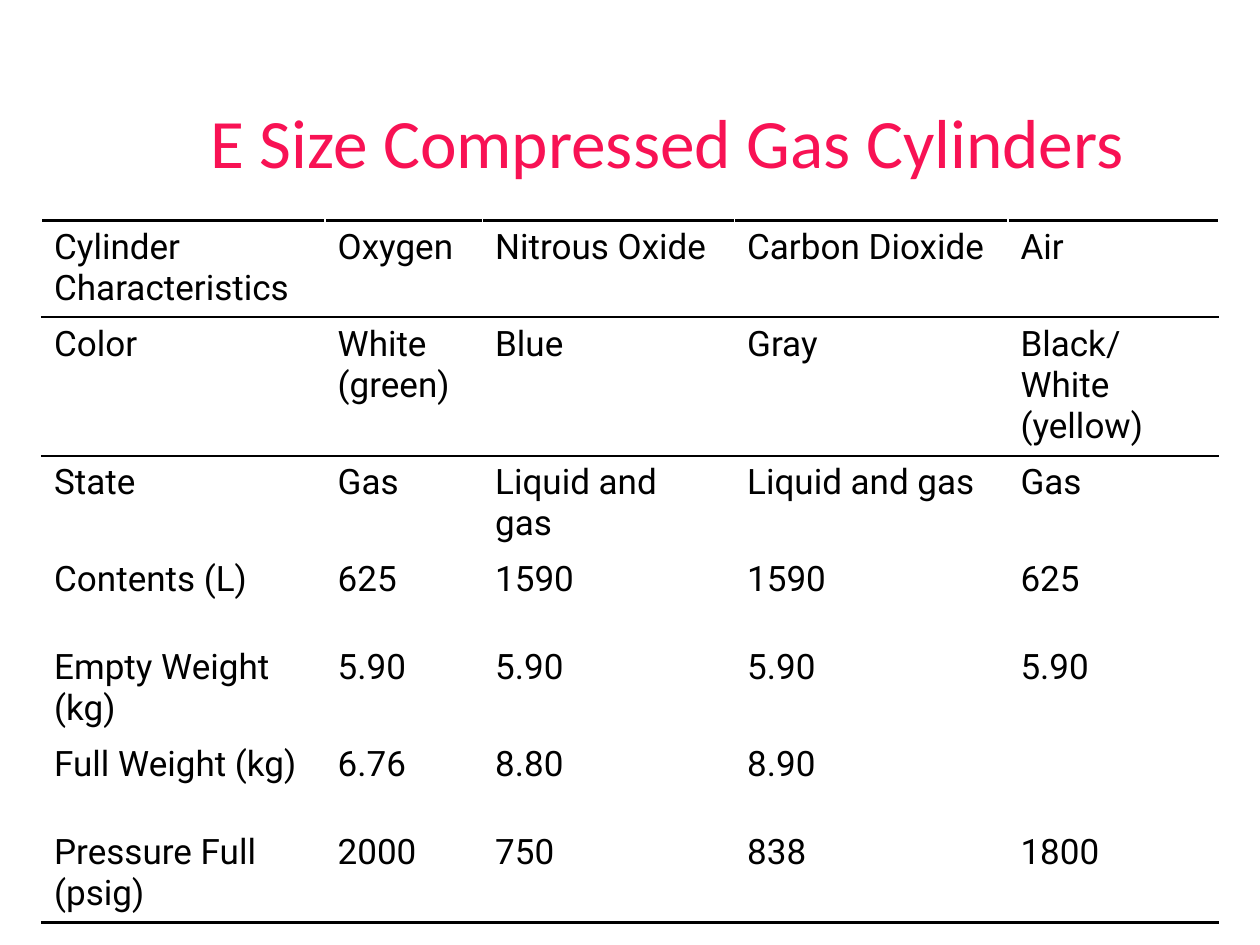
"""Build a slide with a table of E size compressed gas cylinders."""
from lxml import etree
from pptx import Presentation
from pptx.dml.color import RGBColor
from pptx.enum.text import MSO_ANCHOR, PP_ALIGN
from pptx.oxml.ns import qn
from pptx.util import Inches, Pt

MIDDLE = MSO_ANCHOR.MIDDLE
CENTER = PP_ALIGN.CENTER
PINK, BLACK = "F81254", "000000"
TITLE = "E Size Compressed Gas Cylinders"
ROWS = [
    ("Cylinder Characteristics", "Oxygen", "Nitrous Oxide", "Carbon Dioxide", "Air"),
    ("Color", "White (green)", "Blue", "Gray", "Black/White (yellow)"),
    ("State", "Gas", "Liquid and gas", "Liquid and gas", "Gas"),
    ("Contents (L)", "625", "1590", "1590", "625"),
    ("Empty Weight (kg)", "5.90", "5.90", "5.90", "5.90"),
    ("Full Weight (kg)", "6.76", "8.80", "8.90", ""),
    ("Pressure Full (psig)", "2000", "750", "838", "1800"),
]
WIDTHS = [2.25, 1.25, 2, 2.17, 1.67]
HEIGHTS = [0.75] + [0.7] * (len(ROWS) - 1)
RULES = {0: {"lnT": 1.5, "lnB": 1.5}, 1: {"lnT": 1.5}, len(ROWS) - 1: {"lnB": 2.25}}


def write(para, text, font, size, color):
    run = para.add_run()
    run.text = text
    run.font.name = font
    run.font.size = Pt(size)
    run.font.color.rgb = RGBColor.from_string(color)


def border(cell, side, width):
    line = etree.Element(qn("a:" + side), w=str(Pt(width)))
    fill = etree.SubElement(line, qn("a:solidFill"))
    etree.SubElement(fill, qn("a:srgbClr"), val=BLACK)
    cell._tc.get_or_add_tcPr().insert(0, line)


def add_title(slide):
    box = slide.shapes.add_textbox(Inches(1.17), Inches(0.33), Inches(8.25), Inches(1.57))
    frame = box.text_frame
    frame.word_wrap = True
    frame.vertical_anchor = MIDDLE
    para = frame.paragraphs[0]
    para.alignment = CENTER
    write(para, TITLE, "Calibri", 39.6, PINK)


def add_grid(slide):
    grid = slide.shapes.add_table(
        len(ROWS), len(WIDTHS), Inches(0.33), Inches(1.75),
        Inches(sum(WIDTHS)), Inches(sum(HEIGHTS))).table
    grid.first_row = grid.horz_banding = False
    for col, width in zip(grid.columns, WIDTHS):
        col.width = Inches(width)
    for r, (row, height) in enumerate(zip(grid.rows, HEIGHTS)):
        row.height = Inches(height)
        for cell, text in zip(row.cells, ROWS[r]):
            cell.fill.background()
            for side in ("lnB", "lnT"):
                if side in RULES.get(r, {}):
                    border(cell, side, RULES[r][side])
            if text:
                write(cell.text_frame.paragraphs[0], text, "Roboto", 20, BLACK)


def main():
    deck = Presentation()
    deck.slide_width, deck.slide_height = Inches(10), Inches(7.5)
    slide = deck.slides.add_slide(deck.slide_layouts[6])
    add_title(slide)
    add_grid(slide)
    deck.save("out.pptx")


if __name__ == "__main__":
    main()
